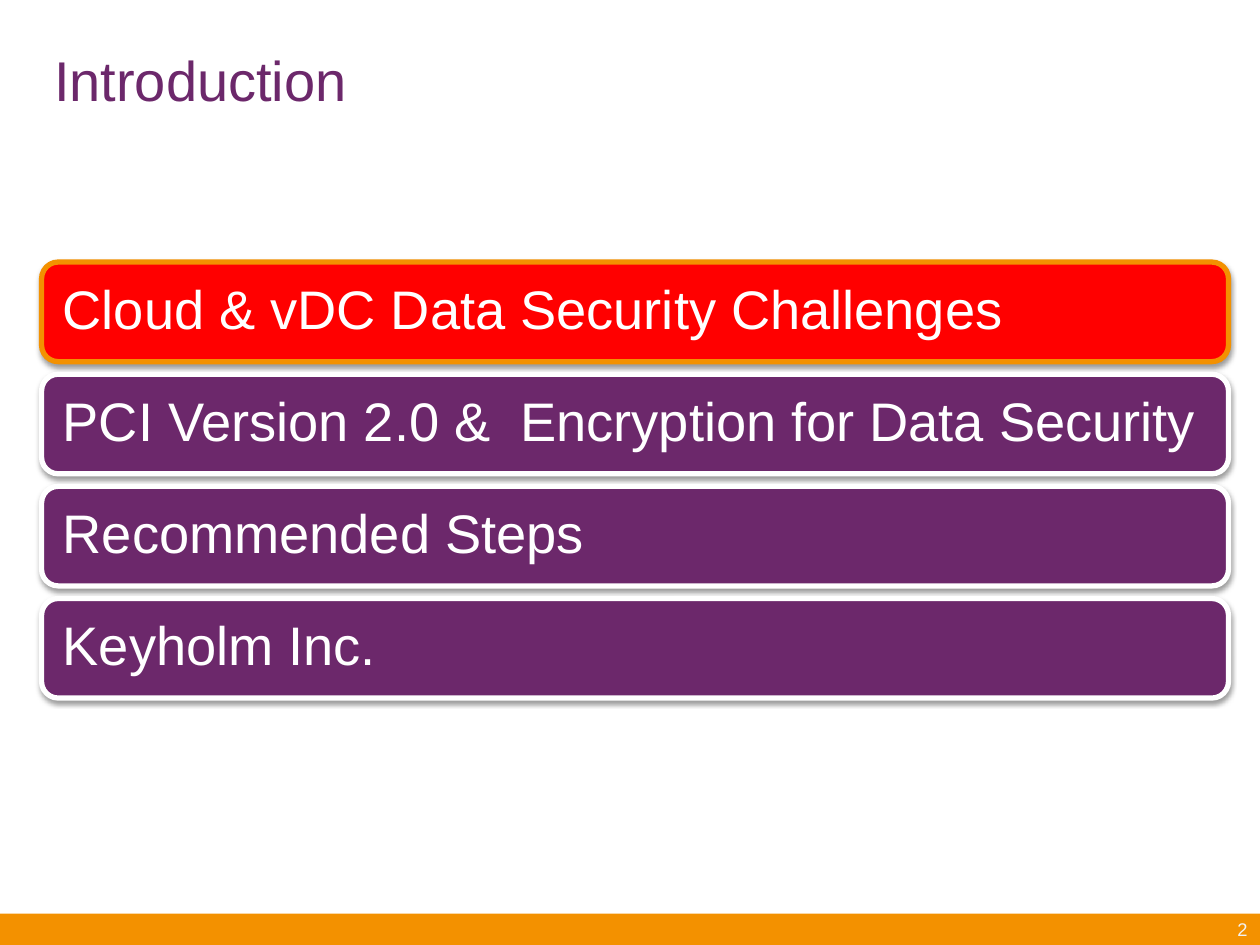
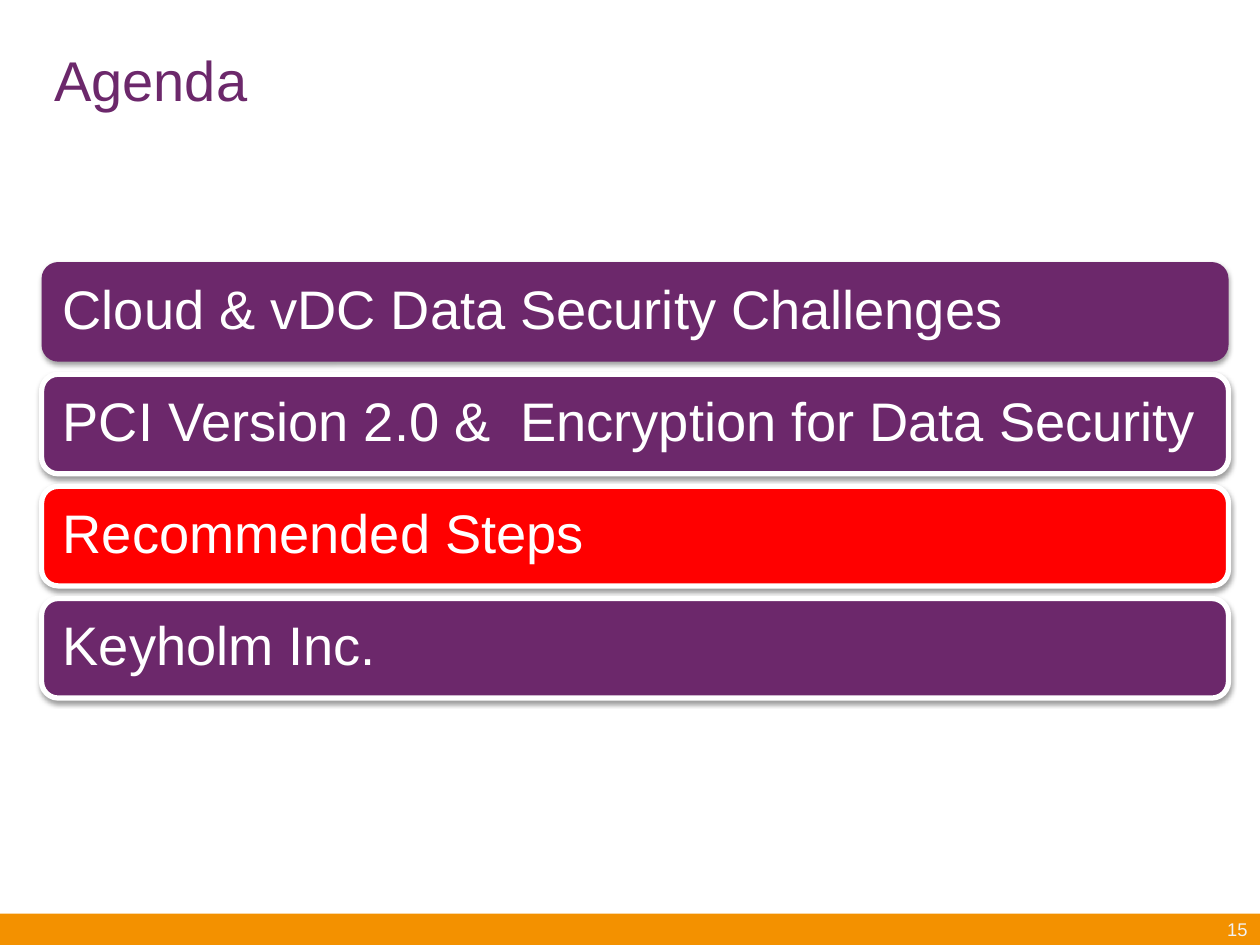
from lxml import etree
from pptx import Presentation
from pptx.dml.color import RGBColor
from pptx.enum.shapes import MSO_SHAPE as SHAPE
from pptx.enum.text import MSO_ANCHOR as ANCHOR, MSO_AUTO_SIZE as AUTO, PP_ALIGN as ALIGN
from pptx.oxml.ns import qn
from pptx.util import Inches, Pt

FONT = "Arial"
PURPLE, ORANGE, RED = "6C286B", "F39100", "FF0000"
WHITE, PALE = "FFFFFF", "F2F2F2"

TITLE_BOX = (0.33, 0, 9.42, 1.25)
AGENDA_BOX = (0.33, 2.08, 9.42, 3.46)
FOOTER_BOX = (0, 7.25, 10, 0.25)
BAR_H = 0.79
TOPICS = [
    "Cloud & vDC Data Security Challenges",
    "PCI Version 2.0 &  Encryption for Data Security",
    "Recommended Steps",
    "Keyholm Inc.",
]


def rgb(color):
    return RGBColor.from_string(color)


def inches(box):
    return [Inches(v) for v in box]


def write(sp, text, size, color, align=ALIGN.LEFT):
    tf = sp.text_frame
    tf.word_wrap = True
    tf.auto_size = AUTO.NONE
    tf.vertical_anchor = ANCHOR.MIDDLE
    p = tf.paragraphs[0]
    p.alignment = align
    r = p.add_run()
    r.text = text
    r.font.name = FONT
    r.font.size = Pt(size)
    r.font.color.rgb = rgb(color)
    return tf


def add_block(s, kind, box, fill, line=None):
    sp = s.shapes.add_shape(kind, *inches(box))
    sp.shadow.inherit = False
    sp.fill.solid()
    sp.fill.fore_color.rgb = rgb(fill)
    if line:
        sp.line.color.rgb = rgb(line)
        sp.line.width = Pt(3)
    else:
        sp.line.fill.background()
    return sp


def add_soft_shadow(sp):
    effects = sp._element.spPr.find(qn("a:effectLst"))
    shadow = etree.SubElement(effects, qn("a:outerShdw"), blurRad=str(Pt(3.1)),
                              dist=str(Pt(1.6)), dir="5400000", rotWithShape="0")
    color = etree.SubElement(shadow, qn("a:srgbClr"), val="000000")
    etree.SubElement(color, qn("a:alpha"), val="38000")


def add_title(s, box, text):
    title = s.shapes.title
    title.left, title.top, title.width, title.height = inches(box)
    write(title, text, 32, PURPLE)


def add_agenda(s, box, current, first_line):
    left, top, width, height = box
    step = (height - BAR_H) / (len(TOPICS) - 1)
    for i, topic in enumerate(TOPICS):
        bar = add_block(s, SHAPE.ROUNDED_RECTANGLE,
                        (left, top + i * step, width, BAR_H),
                        RED if i == current else PURPLE,
                        first_line if i == 0 else WHITE)
        add_soft_shadow(bar)
        tf = write(bar, topic, 31, WHITE)
        tf.margin_left = tf.margin_right = Inches(0.13)
        tf.margin_top = tf.margin_bottom = Inches(0.13)
        tf.paragraphs[0].line_spacing = 0.9


def add_footer(s, box, number):
    left, top, width, height = box
    add_block(s, SHAPE.RECTANGLE, box, ORANGE)
    number_w = 2.33
    number_box = s.shapes.add_textbox(
        *inches((left + width - number_w, top, number_w, height)))
    write(number_box, str(number), 10.5, PALE, ALIGN.RIGHT)


def add_agenda_slide(prs, title, number, current, first_line=None):
    s = prs.slides.add_slide(prs.slide_layouts[5])
    add_footer(s, FOOTER_BOX, number)
    add_title(s, TITLE_BOX, title)
    add_agenda(s, AGENDA_BOX, current, first_line)


def main():
    prs = Presentation()
    prs.slide_width, prs.slide_height = Inches(10), Inches(7.5)
    add_agenda_slide(prs, "Introduction", 2, current=0, first_line=ORANGE)
    add_agenda_slide(prs, "Agenda", 15, current=2)
    prs.save("out.pptx")


if __name__ == "__main__":
    main()
